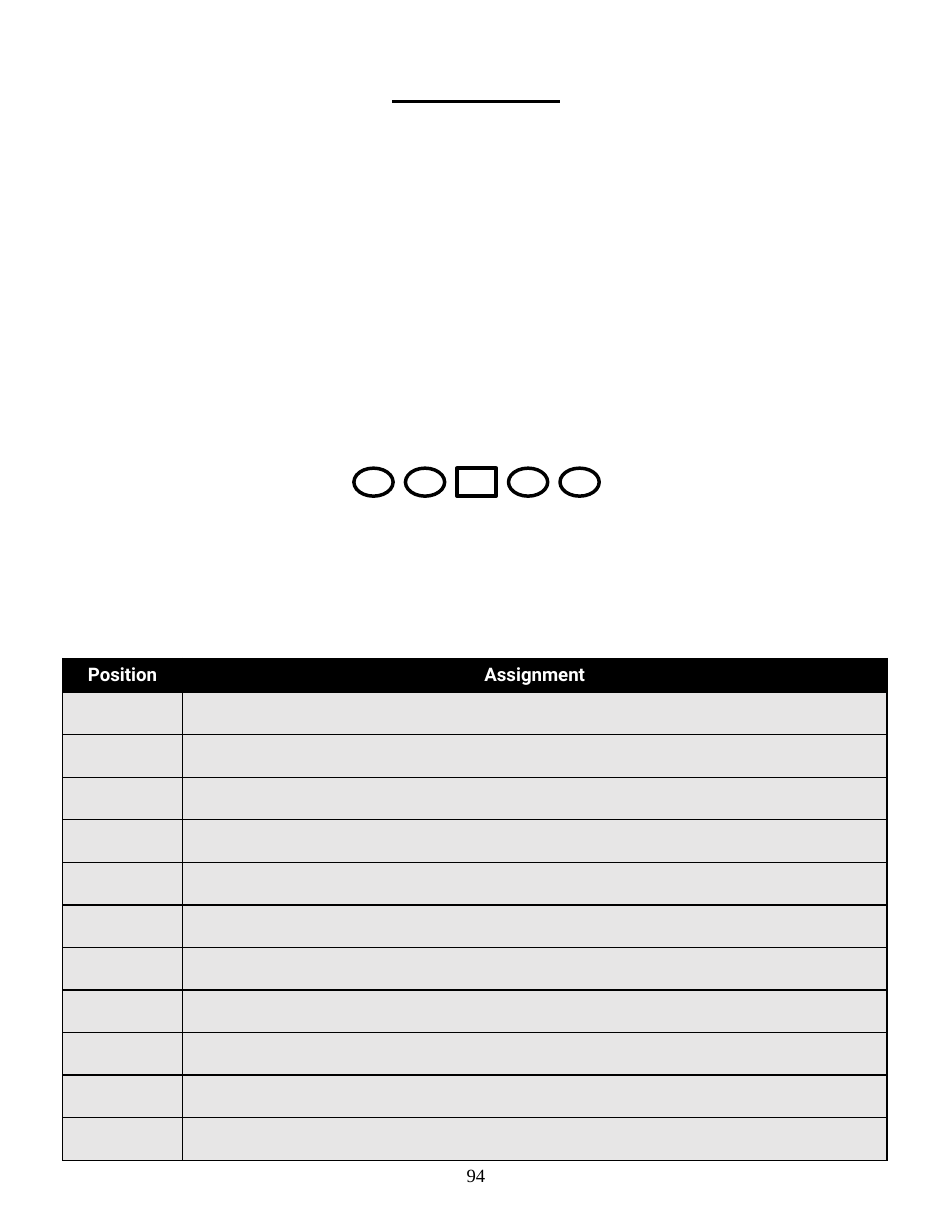
from dataclasses import dataclass

from lxml import etree
from pptx import Presentation
from pptx.dml.color import RGBColor
from pptx.enum.shapes import MSO_CONNECTOR, MSO_SHAPE
from pptx.enum.text import MSO_ANCHOR, PP_ALIGN
from pptx.oxml.ns import qn
from pptx.util import Inches, Pt

OVAL, RECTANGLE = MSO_SHAPE.OVAL, MSO_SHAPE.RECTANGLE
STRAIGHT = MSO_CONNECTOR.STRAIGHT
MIDDLE, CENTER = MSO_ANCHOR.MIDDLE, PP_ALIGN.CENTER

PAGE_WIDTH, PAGE_HEIGHT = 8.5, 11
BLACK, WHITE, GREY = "000000", "FFFFFF", "E7E6E6"

LINEMEN = [OVAL, OVAL, RECTANGLE, OVAL, OVAL]
LINE_LEFT, LINE_TOP, LINE_PITCH = 3.16, 4.18, 0.46
PLAYER_WIDTH, PLAYER_HEIGHT = 0.35, 0.25

TABLE_LEFT, TABLE_TOP = 0.56, 5.88
HEADER_HEIGHT, ROW_HEIGHT, ASSIGNMENT_ROWS = 0.3, 0.38, 11


@dataclass
class Column:
    heading: str
    width: float


COLUMNS = [Column("Position", 1.07), Column("Assignment", 6.29)]


def color(value: str) -> RGBColor:
    return RGBColor.from_string(value)


def write(frame, text: str, font: str, text_color: str, bold: bool = False) -> None:
    frame.text = text
    paragraph = frame.paragraphs[0]
    paragraph.alignment = CENTER
    style = paragraph.runs[0].font
    style.name, style.size, style.bold = font, Pt(12), bold
    style.color.rgb = color(text_color)


def draw_name_rule(slide) -> None:
    """Draw the blank line on which the play's name is written."""
    width, top = 1.5, 0.91
    left = (PAGE_WIDTH - width) / 2
    rule = slide.shapes.add_connector(
        STRAIGHT, Inches(left), Inches(top), Inches(left + width), Inches(top))
    rule.line.color.rgb = color(BLACK)
    rule.line.width = Pt(2)
    etree.SubElement(rule._element.spPr, qn("a:effectLst"))


def draw_offensive_line(slide) -> None:
    for place, outline in enumerate(LINEMEN):
        player = slide.shapes.add_shape(
            outline, Inches(LINE_LEFT + place * LINE_PITCH), Inches(LINE_TOP),
            Inches(PLAYER_WIDTH), Inches(PLAYER_HEIGHT))
        player.shadow.inherit = False
        player.fill.solid()
        player.fill.fore_color.rgb = color(WHITE)
        player.line.color.rgb = color(BLACK)
        player.line.width = Pt(2.25)


def format_cell(cell, fill: str) -> None:
    """Fill the cell and rule all four of its sides."""
    properties = cell._tc.get_or_add_tcPr()
    for side in ("a:lnL", "a:lnR", "a:lnT", "a:lnB"):
        border = etree.SubElement(properties, qn(side), w=str(Pt(1)))
        solid = etree.SubElement(border, qn("a:solidFill"))
        etree.SubElement(solid, qn("a:srgbClr"), val=BLACK)
    cell.fill.solid()
    cell.fill.fore_color.rgb = color(fill)
    cell.vertical_anchor = MIDDLE


def draw_assignments(slide) -> None:
    width = sum(column.width for column in COLUMNS)
    height = HEADER_HEIGHT + ASSIGNMENT_ROWS * ROW_HEIGHT
    table = slide.shapes.add_table(
        ASSIGNMENT_ROWS + 1, len(COLUMNS), Inches(TABLE_LEFT), Inches(TABLE_TOP),
        Inches(width), Inches(height)).table
    for row_number, row in enumerate(table.rows):
        is_header = row_number == 0
        row.height = Inches(HEADER_HEIGHT if is_header else ROW_HEIGHT)
        for cell, column in zip(row.cells, COLUMNS):
            format_cell(cell, BLACK if is_header else GREY)
            if is_header:
                write(cell.text_frame, column.heading, "Roboto", WHITE, bold=True)
            else:
                cell.margin_top = cell.margin_bottom = 0
    for table_column, column in zip(table.columns, COLUMNS):
        table_column.width = Inches(column.width)


def draw_page_number(slide) -> None:
    width, height = 1.91, 0.59
    footer = slide.shapes.add_textbox(
        Inches((PAGE_WIDTH - width) / 2), Inches(10.2), Inches(width), Inches(height))
    footer.text_frame.word_wrap = True
    footer.text_frame.vertical_anchor = MIDDLE
    write(footer.text_frame, "94", "Times New Roman", BLACK)


def main() -> None:
    deck = Presentation()
    deck.slide_width, deck.slide_height = Inches(PAGE_WIDTH), Inches(PAGE_HEIGHT)
    slide = deck.slides.add_slide(deck.slide_layouts[6])
    draw_offensive_line(slide)
    draw_assignments(slide)
    draw_name_rule(slide)
    draw_page_number(slide)
    deck.save("out.pptx")


if __name__ == "__main__":
    main()
